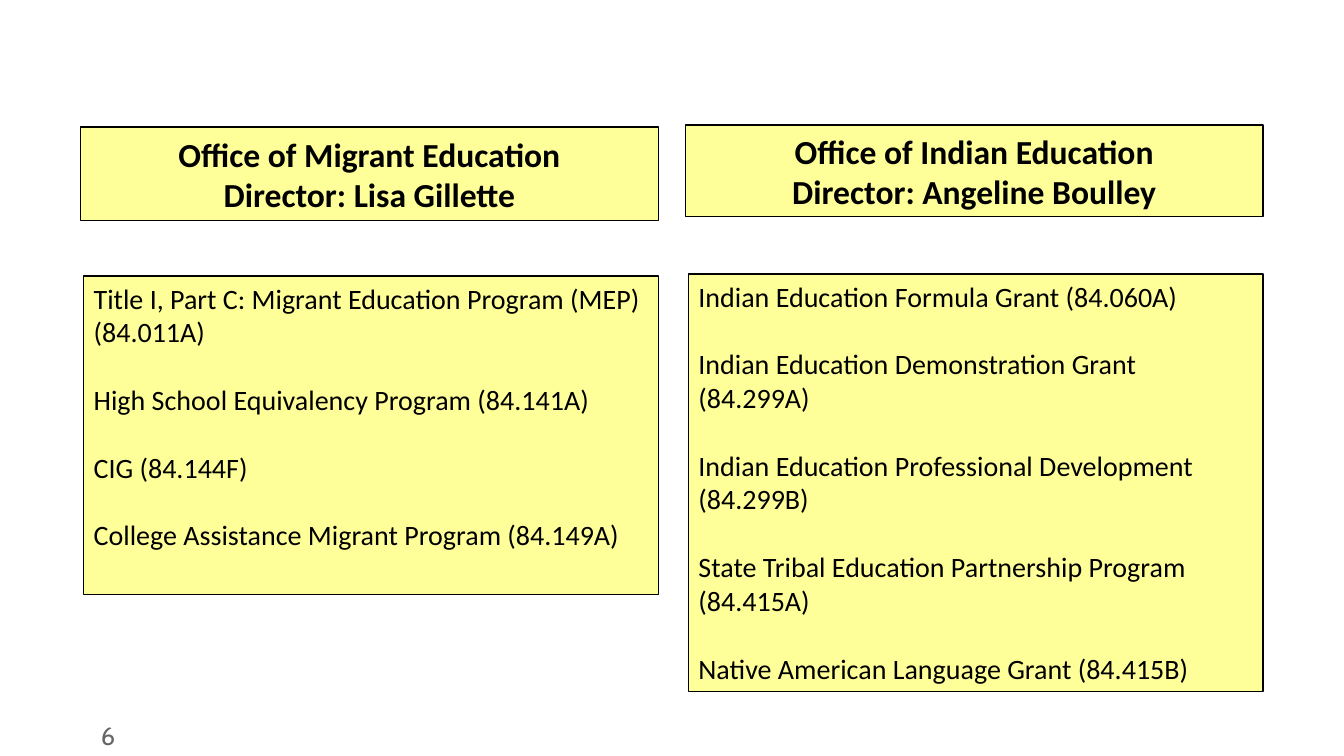
"""Build a slide of two education offices with their directors and grants."""
from pptx import Presentation
from pptx.dml.color import RGBColor
from pptx.enum import shapes, text
from pptx.util import Pt

HEADING = {"name": "Calibri", "size": Pt(24), "bold": True}
GRANT = {"name": "Calibri", "size": Pt(20), "bold": False}
NUMBER = {"name": "Cabin", "size": Pt(18)}

OFFICES = [
    {
        "left": 57.6, "top": 90.7, "heading_height": 67, "grants_height": 227.5,
        "heading": ["Office of Migrant Education", "Director: Lisa Gillette"],
        "grants": [
            "Title I, Part C: Migrant Education Program (MEP) (84.011A)",
            "High School Equivalency Program (84.141A)",
            "CIG (84.144F)",
            "College Assistance Migrant Program (84.149A)",
        ],
    },
    {
        "left": 489.6, "top": 89.3, "heading_height": 65.5, "grants_height": 298.1,
        "heading": ["Office of Indian Education", "Director: Angeline Boulley"],
        "grants": [
            "Indian Education Formula Grant (84.060A)",
            "Indian Education Demonstration Grant (84.299A)",
            "Indian Education Professional Development (84.299B)",
            "State Tribal Education Partnership Program (84.415A)",
            "Native American Language Grant (84.415B)",
        ],
    },
]


def color(value):
    """Return the colour for a hex string."""
    return RGBColor.from_string(value)


def write(frame, lines, font, ink, align, gap=0):
    """Fill a text frame with one paragraph per line."""
    frame.word_wrap = True
    for index, line in enumerate(lines):
        paragraph = frame.add_paragraph() if index else frame.paragraphs[0]
        paragraph.text = line
        paragraph.alignment = align
        paragraph.space_before = Pt(gap if index else 0)
        for key, value in font.items():
            setattr(paragraph.font, key, value)
        paragraph.font.color.rgb = color(ink)


def add_panel(slide, left, top, width, height, anchor):
    """Add an outlined yellow panel and return its text frame."""
    panel = slide.shapes.add_shape(
        shapes.MSO_SHAPE.RECTANGLE, Pt(left), Pt(top), Pt(width), Pt(height))
    panel.shadow.inherit = False
    panel.fill.solid()
    panel.fill.fore_color.rgb = color("FFFF99")
    panel.line.color.rgb = color("000000")
    panel.line.width = Pt(1)
    panel.text_frame.vertical_anchor = anchor
    return panel.text_frame


def add_office(slide, office):
    """Add the heading and the grant list of one office."""
    left, top = office["left"], office["top"]
    heading = add_panel(slide, left, top, 412.6, office["heading_height"],
                        text.MSO_ANCHOR.MIDDLE)
    write(heading, office["heading"], HEADING, "000000", text.PP_ALIGN.CENTER)
    grants = add_panel(slide, left + 2.2, top + 106.5, 410.4,
                       office["grants_height"], text.MSO_ANCHOR.TOP)
    write(grants, office["grants"], GRANT, "000000", text.PP_ALIGN.LEFT, gap=24.4)


def add_slide_number(slide, number):
    """Add the slide number at the bottom left."""
    frame = slide.shapes.add_textbox(Pt(72), Pt(511.2), Pt(56), Pt(28.8)).text_frame
    frame.margin_left = frame.margin_right = Pt(0)
    write(frame, [number], NUMBER, "666666", text.PP_ALIGN.LEFT)


def main():
    """Build and save the presentation."""
    deck = Presentation()
    deck.slide_width, deck.slide_height = Pt(960), Pt(540)
    slide = deck.slides.add_slide(deck.slide_layouts[6])
    add_slide_number(slide, "6")
    for office in OFFICES:
        add_office(slide, office)
    deck.save("out.pptx")


if __name__ == "__main__":
    main()
